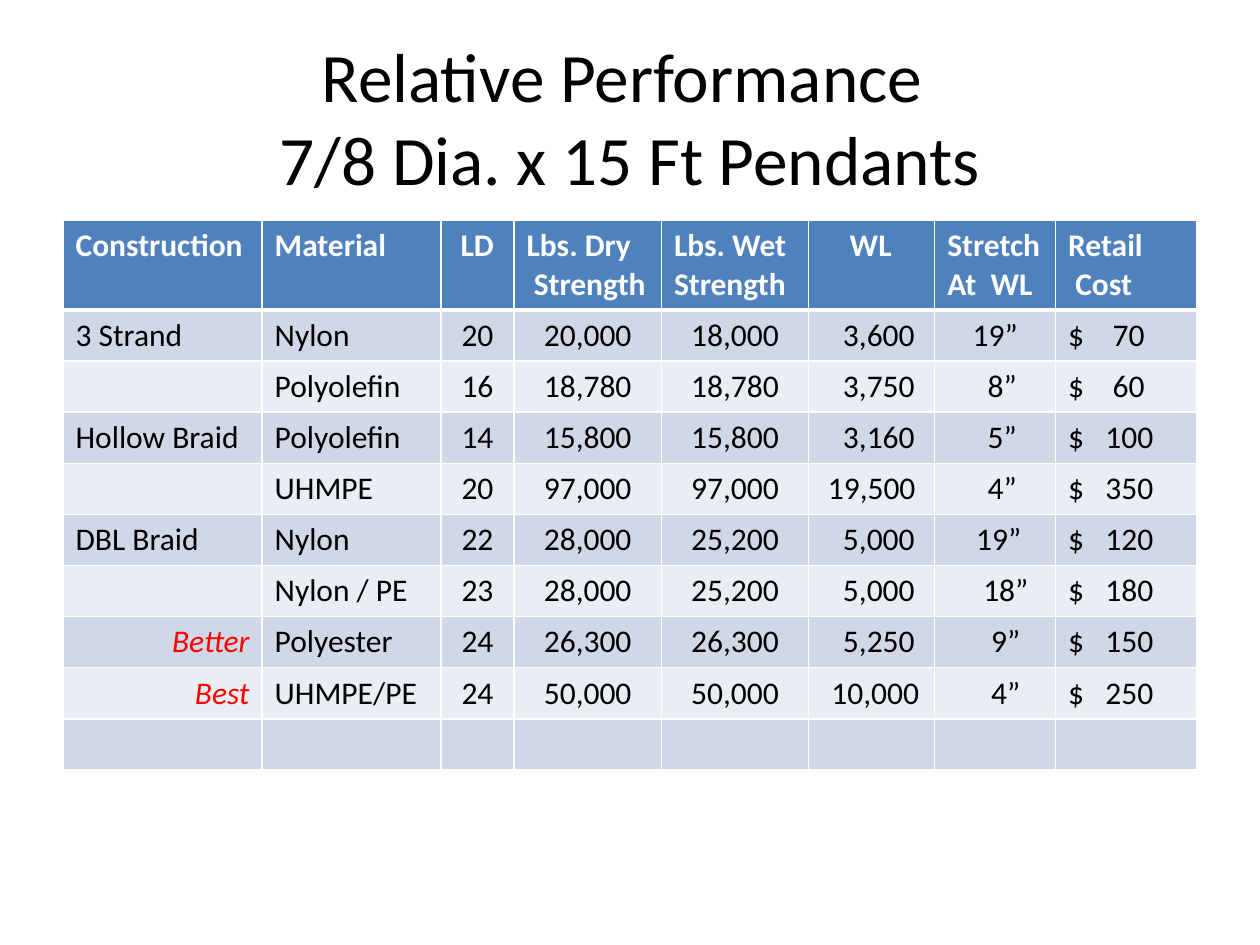
"""Build a slide comparing the strength, stretch and cost of mooring pendants."""
import pptx
import pptx.dml.color
import pptx.enum.text
import pptx.oxml
import pptx.oxml.ns
import pptx.util

Pt = pptx.util.Pt
ALIGN = pptx.enum.text.PP_ALIGN
COLORS = {"header": "4F81BD", "odd": "D0D8E8", "even": "E9EDF4",
          "white": "FFFFFF", "black": "000000", "rating": "FF0000"}
COLUMN_WIDTHS = [113.8, 102.2, 41.8, 84.2, 84.2, 72, 69.1, 80.7]
CENTERED_COLUMNS = range(2, 7)
ROWS = [
    ["Construction", "Material", " LD", "Lbs. Dry\n Strength",
     "Lbs. Wet\nStrength", "    WL", "Stretch\nAt  WL", "Retail\n Cost"],
    ["3 Strand", "Nylon", "20", "20,000", "18,000", "  3,600", "19”", "$    70"],
    ["", "Polyolefin", "16", "18,780", "18,780", "  3,750", "  8”", "$    60"],
    ["Hollow Braid", "Polyolefin", "14", "15,800", "15,800", "  3,160", "  5”", "$   100"],
    ["", "UHMPE", "20", "97,000", "97,000", "19,500", "  4”", "$   350"],
    ["DBL Braid", "Nylon", "22", "28,000", "25,200", "  5,000", " 19”", "$   120"],
    ["", "Nylon / PE", "23", "28,000", "25,200", "  5,000", "   18”", "$   180"],
    ["Better", "Polyester", "24", "26,300", "26,300", "  5,250", "   9”", "$   150"],
    ["Best", "UHMPE/PE", "24", "50,000", "50,000", " 10,000", "   4”", "$   250"],
    [""] * 8,
]


def style_text(paragraph, size, color, bold=False, italic=False):
    for span in paragraph.runs:
        span.font.name = "Calibri"
        span.font.size = Pt(size)
        span.font.bold = bold
        span.font.italic = italic
        span.font.color.rgb = pptx.dml.color.RGBColor.from_string(COLORS[color])


def add_borders(cell, widths):
    properties = cell._tc.get_or_add_tcPr()
    for position, (side, width) in enumerate(widths.items()):
        properties.insert(position, pptx.oxml.parse_xml(
            f'<a:{side} {pptx.oxml.ns.nsdecls("a")} w="{Pt(width)}"><a:solidFill>'
            f'<a:srgbClr val="{COLORS["white"]}"/></a:solidFill></a:{side}>'))


deck = pptx.Presentation()
deck.slide_width, deck.slide_height = Pt(720), Pt(540)
page = deck.slides.add_slide(deck.slide_layouts[5])

title = page.shapes.title
title.left, title.top, title.width, title.height = Pt(36), Pt(21.6), Pt(648), Pt(90)
title.text_frame.text = "Relative Performance \v7/8 Dia. x 15 Ft Pendants"
title.text_frame.auto_size = pptx.enum.text.MSO_AUTO_SIZE.NONE
title.text_frame.vertical_anchor = pptx.enum.text.MSO_ANCHOR.MIDDLE
title.text_frame.paragraphs[0].alignment = ALIGN.CENTER
style_text(title.text_frame.paragraphs[0], 39.6, "black")

table = page.shapes.add_table(len(ROWS), len(COLUMN_WIDTHS),
                              Pt(36), Pt(126), Pt(648), Pt(313.2)).table
for column, width in zip(table.columns, COLUMN_WIDTHS):
    column.width = Pt(width)

for row_index, values in enumerate(ROWS):
    is_header = row_index == 0
    table.rows[row_index].height = Pt(50.4 if is_header else 29.2)
    band = "header" if is_header else "odd" if row_index % 2 else "even"
    for column_index, value in enumerate(values):
        cell = table.cell(row_index, column_index)
        cell.fill.solid()
        cell.fill.fore_color.rgb = pptx.dml.color.RGBColor.from_string(COLORS[band])
        add_borders(cell, {"lnL": 1, "lnR": 1, "lnT": 3 if row_index == 1 else 1,
                           "lnB": 3 if is_header else 1})
        cell.text_frame.text = value
        is_rating = value in ("Better", "Best")
        color = "white" if is_header else "rating" if is_rating else "black"
        for paragraph in cell.text_frame.paragraphs:
            if is_rating:
                paragraph.alignment = ALIGN.RIGHT
            elif column_index in CENTERED_COLUMNS and not is_header:
                paragraph.alignment = ALIGN.CENTER
            style_text(paragraph, 18, color, bold=is_header, italic=is_rating)

deck.save("out.pptx")
